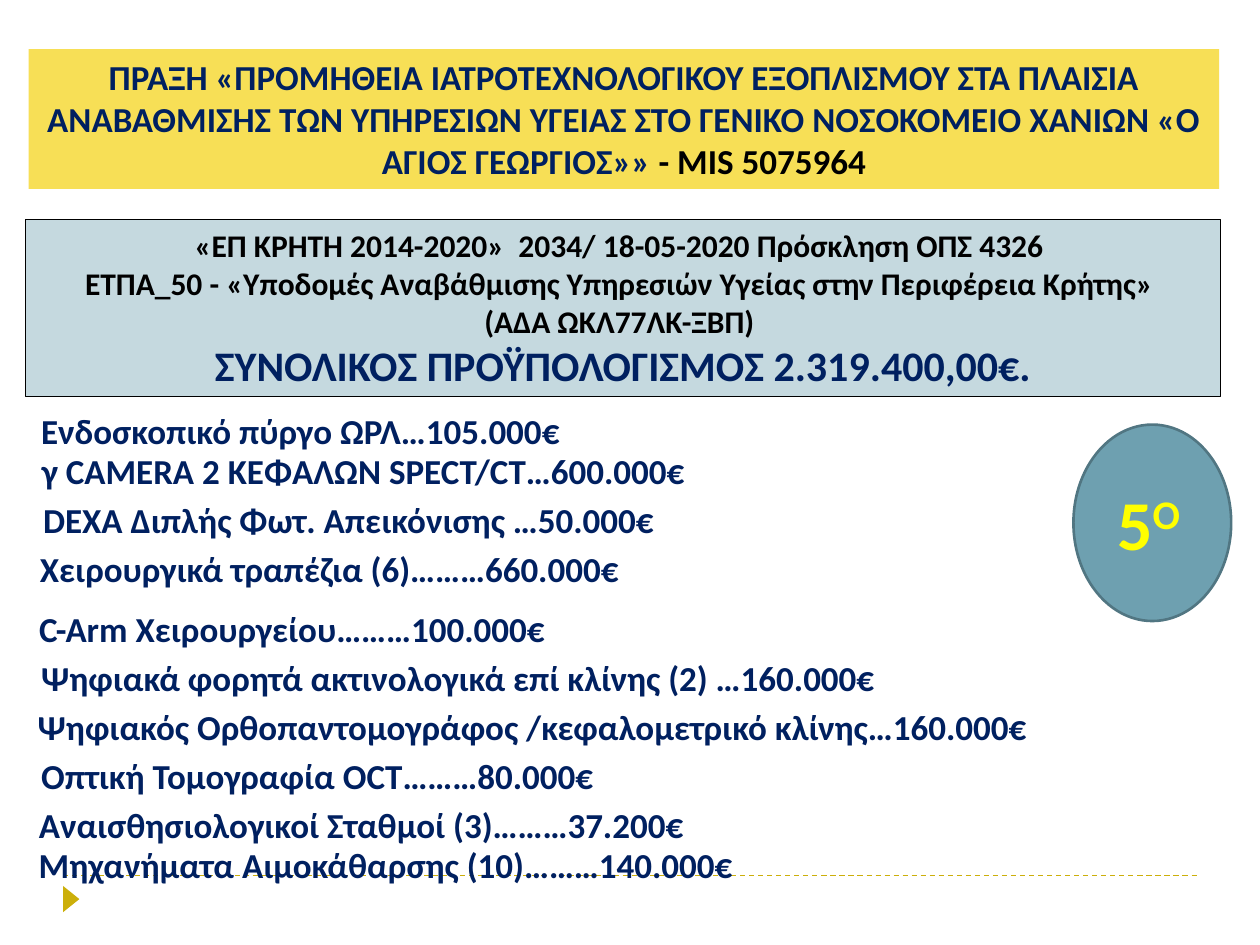
from lxml import etree
from pptx import Presentation
from pptx.dml.color import RGBColor
from pptx.enum.dml import MSO_LINE
from pptx.enum.shapes import MSO_CONNECTOR, MSO_SHAPE as Shape
from pptx.enum.text import MSO_ANCHOR as Anchor, MSO_AUTO_SIZE as AutoSize, PP_ALIGN as Align
from pptx.oxml.ns import qn
from pptx.util import Cm, Pt

NAVY, BLACK, GOLD = "002060", "000000", "CCAF0A"

EQUIPMENT = [
    ("Ενδοσκοπικό πύργο ΩΡΛ…105.000€", 0, 8.13, 12.12, Align.CENTER),
    ("γ CAMERA 2 ΚΕΦΑΛΩΝ SPECT/CT…600.000€", 0.58, 8.94, 13.49, Align.CENTER),
    ("DEXA Διπλής Φωτ. Απεικόνισης …50.000€", 0.58, 9.93, 12.9, Align.CENTER),
    ("Χειρουργικά τραπέζια (6)………660.000€", -0.2, 10.92, 13.69, Align.CENTER),
    ("C-Arm Χειρουργείου………100.000€", -0.51, 12.12, 12.8, Align.CENTER),
    ("Ψηφιακά φορητά ακτινολογικά επί κλίνης (2) …160.000€", 0.41, 13.11, 17.65, Align.CENTER),
    ("Ψηφιακός Ορθοπαντομογράφος /κεφαλομετρικό κλίνης…160.000€", 0.51, 14.1, 23.11, Align.LEFT),
    ("Οπτική Τομογραφία OCT………80.000€", 0.58, 15.09, 13.69, Align.LEFT),
    ("Αναισθησιολογικοί Σταθμοί (3)………37.200€", -1.3, 16.08, 17.17, Align.CENTER),
    ("Μηχανήματα Αιμοκάθαρσης (10)………140.000€", -1.3, 16.87, 18.16, Align.CENTER),
]


def color(value):
    return RGBColor.from_string(value)


def add_span(para, text, size=20, ink=NAVY, bold=True, baseline=0):
    span = para.add_run()
    span.text = text
    font = span.font
    font.name, font.size, font.bold = "Calibri", Pt(size), bold
    font.color.rgb = color(ink)
    if baseline:
        span._r.get_or_add_rPr().set("baseline", str(baseline * 1000))


def add_panel(page, kind, box, fill, line=None, width=0.75):
    panel = page.shapes.add_shape(kind, *map(Cm, box))
    panel.shadow.inherit = False
    panel.fill.solid()
    panel.fill.fore_color.rgb = color(fill)
    if line:
        panel.line.color.rgb = color(line)
        panel.line.width = Pt(width)
    else:
        panel.line.fill.background()
    return panel


def write(shape, paragraphs, align=Align.CENTER, anchor=Anchor.TOP):
    frame = shape.text_frame
    frame.word_wrap = True
    frame.vertical_anchor = anchor
    for index, spans in enumerate(paragraphs):
        para = frame.paragraphs[0] if index == 0 else frame.add_paragraph()
        para.alignment = align
        for text, style in spans:
            add_span(para, text, **style)
    return frame


def add_footer(page, left, top, width):
    rule = page.shapes.add_connector(
        MSO_CONNECTOR.STRAIGHT, Cm(left), Cm(top), Cm(left + width), Cm(top))
    rule.line.color.rgb = color(GOLD)
    rule.line.width = Pt(0.75)
    rule.line.dash_style = MSO_LINE.DASH
    etree.SubElement(rule._element.spPr, qn("a:effectLst"))
    marker = add_panel(page, Shape.ISOSCELES_TRIANGLE,
                       (left - 0.1, top + 0.31, 0.53, 0.33), GOLD)
    marker.rotation = 90


def add_call(page, box):
    panel = add_panel(page, Shape.RECTANGLE, box, "C5D9DF", BLACK)
    body = {"size": 18, "ink": BLACK}
    write(panel, [
        [("«ΕΠ ΚΡΗΤΗ 2014-2020»  2034/ 18-05-2020 Πρόσκληση ΟΠΣ 4326 ", body)],
        [("ΕΤΠΑ_50 - «Υποδομές Αναβάθμισης Υπηρεσιών Υγείας στην Περιφέρεια Κρήτης» ", body)],
        [("(ΑΔΑ ΩΚΛ77ΛΚ-ΞΒΠ) ", body)],
        [("ΣΥΝΟΛΙΚΟΣ ΠΡΟΫΠΟΛΟΓΙΣΜΟΣ 2.319.400,00€.", {"size": 24})],
    ], anchor=Anchor.MIDDLE)


def add_title(page, box):
    panel = add_panel(page, Shape.RECTANGLE, box, "F7DF56")
    write(panel, [[
        ("ΠΡΑΞΗ «ΠΡΟΜΗΘΕΙΑ ΙΑΤΡΟΤΕΧΝΟΛΟΓΙΚΟΥ ΕΞΟΠΛΙΣΜΟΥ ΣΤΑ ΠΛΑΙΣΙΑ "
         "ΑΝΑΒΑΘΜΙΣΗΣ ΤΩΝ ΥΠΗΡΕΣΙΩΝ ΥΓΕΙΑΣ ΣΤΟ ΓΕΝΙΚΟ ΝΟΣΟΚΟΜΕΙΟ ΧΑΝΙΩΝ "
         "«Ο ΑΓΙΟΣ ΓΕΩΡΓΙΟΣ»» ", {}),
        ("- MIS 5075964", {"ink": BLACK}),
    ]])


def add_badge(page, box):
    badge = add_panel(page, Shape.OVAL, box, "6EA0B0", "517682", 1.5)
    number = {"size": 40, "ink": "FFFF00"}
    write(badge, [[
        ("5", number),
        ("Ο", {**number, "baseline": 30}),
        (" ", {"size": 18, "ink": "FFFFFF", "bold": False}),
    ]], anchor=Anchor.MIDDLE)


def add_equipment(page, items, height):
    for text, left, top, width, align in items:
        box = page.shapes.add_textbox(Cm(left), Cm(top), Cm(width), Cm(height))
        frame = write(box, [[(text, {})]], align)
        frame.auto_size = AutoSize.SHAPE_TO_FIT_TEXT


def main():
    deck = Presentation()
    deck.slide_width, deck.slide_height = Cm(25.4), Cm(19.05)
    page = deck.slides.add_slide(deck.slide_layouts[6])
    add_footer(page, 1.27, 17.65, 22.86)
    add_call(page, (0.51, 4.42, 24.1, 3.58))
    add_title(page, (0.58, 0.99, 24, 2.82))
    add_badge(page, (21.64, 8.56, 3.18, 3.96))
    add_equipment(page, EQUIPMENT, 1.12)
    deck.save("out.pptx")


if __name__ == "__main__":
    main()
